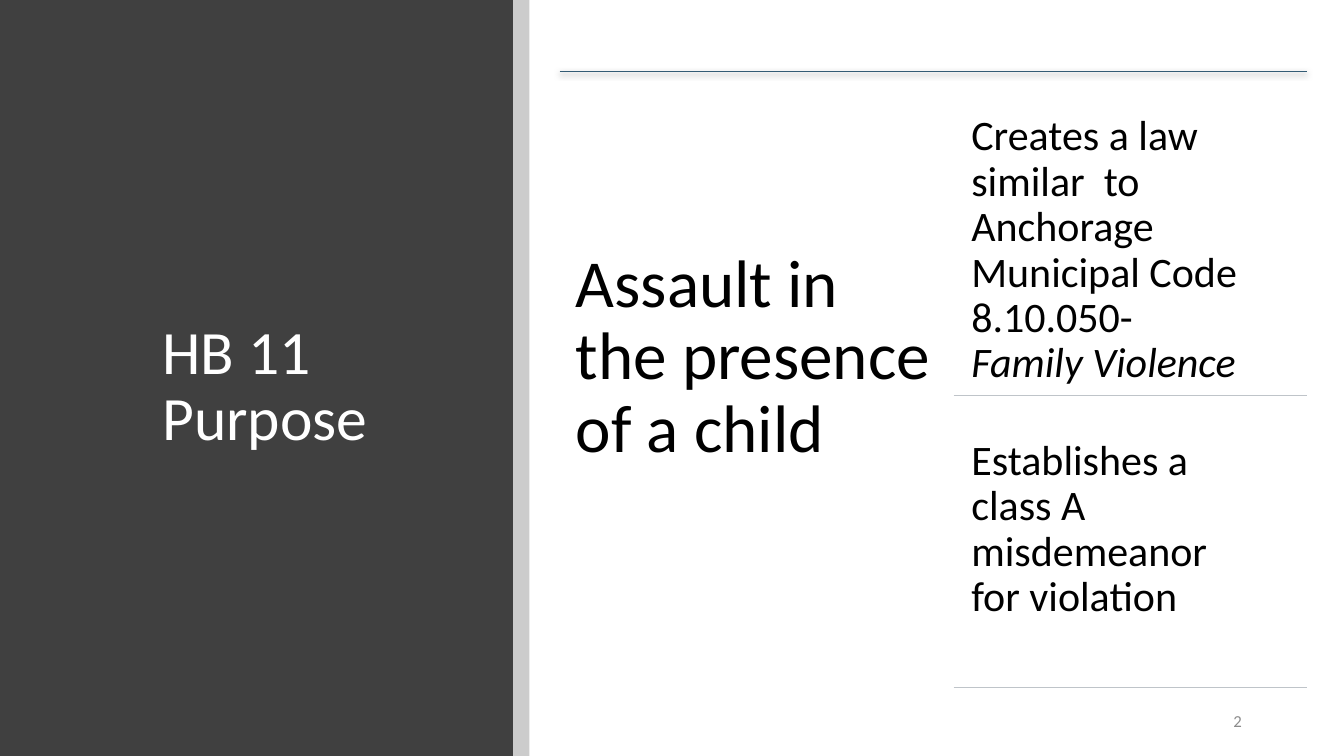
from dataclasses import dataclass

from lxml.etree import SubElement
from pptx import Presentation
from pptx.dml.color import RGBColor
from pptx.enum.shapes import MSO_CONNECTOR as CONN, MSO_SHAPE as SHAPE
from pptx.enum.text import MSO_ANCHOR as ANCHOR, MSO_AUTO_SIZE as AUTO, PP_ALIGN as ALIGN
from pptx.oxml.ns import qn
from pptx.util import Cm, Pt


@dataclass(frozen=True)
class Theme:
    font: str = "Calibri"
    panel: str = "404040"
    black: str = "000000"
    white: str = "FFFFFF"
    rule: str = "335B74"
    divider: str = "BFC4C9"
    number: str = "8C8C8C"
    title_size: int = 44
    lead_size: int = 48
    fact_size: int = 30
    number_size: int = 12


T = Theme()
SLIDE_W, SLIDE_H = 33.87, 19.05
PANEL_W = 12.93
RIGHT = 32.94

# Top, width, height and runs (text, italic) of each fact
FACTS = [
    (2.59, 7.65, 7.37, [("Creates a law similar  to Anchorage Municipal Code 8.10.050- ", False),
                        ("Family Violence", True)]),
    (10.77, 7.54, 6.55, [("Establishes a class A misdemeanor for violation", False)]),
]


def write(sp, runs, size, color, inset=None, align=ALIGN.LEFT,
          anchor=ANCHOR.TOP, spacing=None):
    """Fill one paragraph of a shape, run by run."""
    tf = sp.text_frame
    tf.word_wrap = True
    tf.auto_size = AUTO.NONE
    tf.vertical_anchor = anchor
    if inset is not None:
        tf.margin_left = tf.margin_right = tf.margin_top = tf.margin_bottom = Cm(inset)
    p = tf.paragraphs[0]
    p.alignment = align
    if spacing:
        p.line_spacing = spacing
    for text, italic in runs:
        r = p.add_run()
        r.text = text
        r.font.name = T.font
        r.font.size = Pt(size)
        r.font.italic = italic
        r.font.color.rgb = RGBColor.from_string(color)


def add_text(slide, box, *args, **kwargs):
    write(slide.shapes.add_textbox(*map(Cm, box)), *args, **kwargs)


def add_band(slide, x, width, color, opacity=100):
    """Full-height vertical band."""
    sp = slide.shapes.add_shape(SHAPE.RECTANGLE, Cm(x), 0, Cm(width), Cm(SLIDE_H))
    sp.shadow.inherit = False
    sp.fill.solid()
    sp.fill.fore_color.rgb = RGBColor.from_string(color)
    sp.line.fill.background()
    if opacity < 100:
        clr = sp.fill._xPr.find(qn("a:solidFill"))[0]
        SubElement(clr, qn("a:alpha"), val=str(opacity * 1000))


def add_rule(slide, x, y, color, shadow=False):
    """Thin horizontal line up to the right edge of the content."""
    line = slide.shapes.add_connector(CONN.STRAIGHT, Cm(x), Cm(y), Cm(RIGHT), Cm(y))
    line.line.width = Pt(0.5)
    line.line.color.rgb = RGBColor.from_string(color)
    effects = SubElement(line._element.spPr, qn("a:effectLst"))
    if shadow:
        outer = SubElement(effects, qn("a:outerShdw"), blurRad=str(Pt(4.5)),
                           dist=str(Pt(1.5)), dir="5400000", rotWithShape="0")
        clr = SubElement(outer, qn("a:srgbClr"), val=T.black)
        SubElement(clr, qn("a:alpha"), val="63000")


def add_title(slide):
    title = slide.shapes.title
    title.left, title.top, title.width, title.height = map(Cm, (3.84, 2.26, 7.77, 15.01))
    write(title, [("HB 11 Purpose", False)], T.title_size, T.white,
          anchor=ANCHOR.MIDDLE, spacing=0.9)
    # Bring the title in front of the panel
    slide.shapes._spTree.append(title._element)


def main():
    prs = Presentation()
    prs.slide_width, prs.slide_height = Cm(SLIDE_W), Cm(SLIDE_H)
    slide = prs.slides.add_slide(prs.slide_layouts[5])

    # Left panel with title
    add_band(slide, 0, PANEL_W, T.panel)
    add_title(slide)
    add_band(slide, PANEL_W, 0.41, T.black, opacity=20)

    # Lead statement
    add_rule(slide, 14.1, 1.8, T.rule, shadow=True)
    add_text(slide, (14.1, 5.87, 9.93, 12.29), [("Assault in the presence of a child", False)],
             T.lead_size, T.black, inset=0.41, spacing=0.9)

    # Facts, each closed by a divider
    for top, width, height, runs in FACTS:
        add_text(slide, (24.18, top, width, height), runs,
                 T.fact_size, T.black, inset=0.3, spacing=0.9)
        add_rule(slide, 24.03, top + height, T.divider)

    # Slide number
    add_text(slide, (23.93, 17.65, 7.62, 1.02), [("2", False)], T.number_size, T.number,
             align=ALIGN.RIGHT, anchor=ANCHOR.MIDDLE)

    prs.save("out.pptx")


if __name__ == "__main__":
    main()
